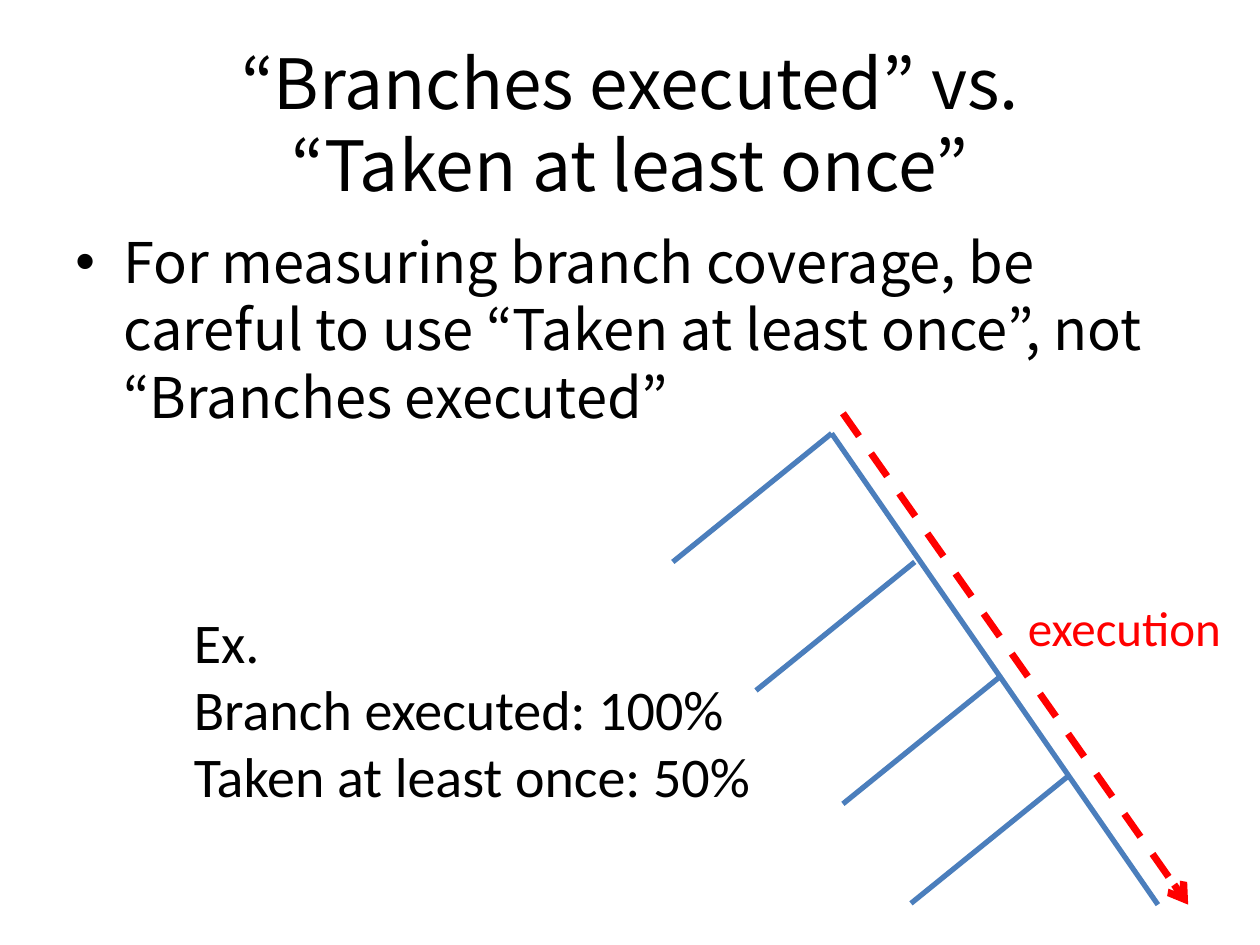
from lxml.etree import SubElement
from pptx import Presentation
from pptx.dml.color import RGBColor
from pptx.enum.dml import MSO_LINE
from pptx.enum.shapes import MSO_CONNECTOR
from pptx.enum.text import MSO_ANCHOR, PP_ALIGN
from pptx.oxml.ns import qn
from pptx.util import Inches, Pt

BLACK = RGBColor(0, 0, 0)
BLUE = RGBColor(0x4B, 0x7E, 0xBC)
RED = RGBColor(0xFF, 0, 0)
NOTO = "Noto Sans CJK KR"
CALIBRI = "Calibri"

TITLE = ["“Branches executed” vs.\v“Taken at least once”"]
BODY = ["For measuring branch coverage, be careful to use “Taken at least once”, "
        "not “Branches executed”"]
SAMPLE = ["Ex.", "Branch executed: 100%", "Taken at least once: 50%"]
TRUNK = (6.6, 3.44, 9.19, 7.18)
FORKS = [(6.6, 3.44), (7.26, 4.46), (7.95, 5.36), (8.49, 6.15)]
REACH = (-1.26, 1.02)
RUN = (6.69, 3.28, 9.43, 7.18)


def add_text(slide, box, lines, font, size, color, wrap=True):
    frame = slide.shapes.add_textbox(*map(Inches, box)).text_frame
    frame.word_wrap = wrap
    for i, line in enumerate(lines):
        para = frame.add_paragraph() if i else frame.paragraphs[0]
        para.text = line
        para.font.name = font
        para.font.size = Pt(size)
        para.font.color.rgb = color
    return frame


def add_line(slide, ends, color, width):
    line = slide.shapes.add_connector(MSO_CONNECTOR.STRAIGHT, *map(Inches, ends))
    line.line.color.rgb = color
    line.line.width = Pt(width)
    SubElement(line._element.spPr, qn("a:effectLst"))
    return line


def add_bullet(para):
    props = para._p.get_or_add_pPr()
    props.set("marL", str(Inches(0.38)))
    props.set("indent", str(Inches(-0.38)))
    SubElement(props, qn("a:buFont"), typeface="Arial")
    SubElement(props, qn("a:buChar"), char="•")


def main():
    deck = Presentation()
    deck.slide_width, deck.slide_height = Inches(10), Inches(7.5)
    slide = deck.slides.add_slide(deck.slide_layouts[6])

    title = add_text(slide, (0.5, 0.3, 9, 1.25), TITLE, NOTO, 39.6, BLACK)
    title.vertical_anchor = MSO_ANCHOR.MIDDLE
    title.margin_top = Inches(0.15)
    head = title.paragraphs[0]
    head.alignment = PP_ALIGN.CENTER
    head.line_spacing = Pt(47)

    body = add_text(slide, (0.5, 1.75, 9, 4.95), BODY, NOTO, 32, BLACK)
    point = body.paragraphs[0]
    point.line_spacing = Pt(38.6)
    point.space_before = Pt(3)
    add_bullet(point)

    add_line(slide, TRUNK, BLUE, 3)
    for x, y in FORKS:
        add_line(slide, (x, y, x + REACH[0], y + REACH[1]), BLUE, 3)
    run = add_line(slide, RUN, RED, 4)
    run.line.dash_style = MSO_LINE.DASH
    SubElement(run.line._get_or_add_ln(), qn("a:tailEnd"), type="arrow")

    add_text(slide, (8.06, 4.69, 1.75, 0.57), ["execution"], CALIBRI, 28, RED, False)
    add_text(slide, (1.44, 4.77, 4.66, 1.72), SAMPLE, CALIBRI, 32, BLACK, False)
    deck.save("out.pptx")


if __name__ == "__main__":
    main()
